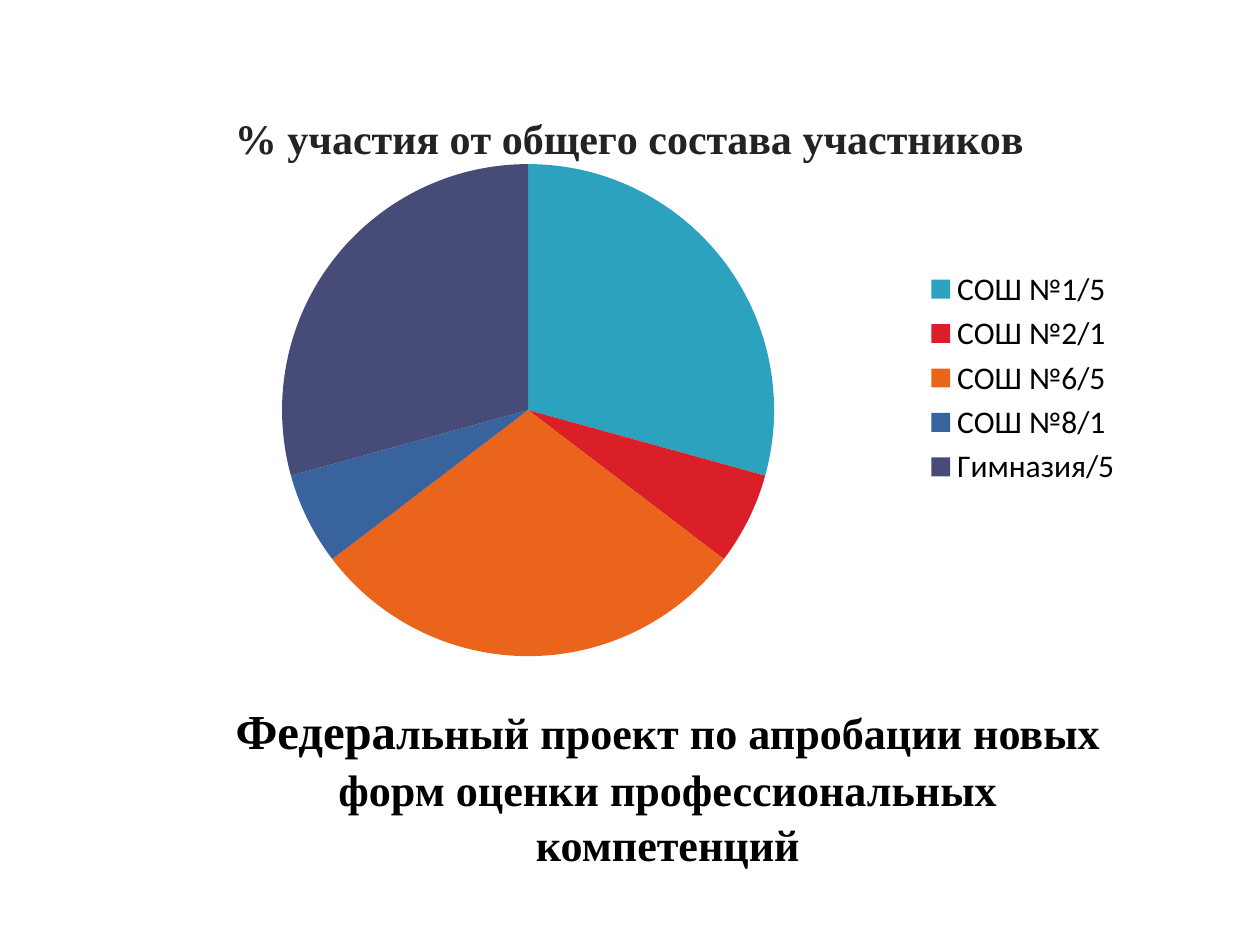
from lxml import etree
from pptx import Presentation
from pptx.chart.data import CategoryChartData
from pptx.dml.color import RGBColor
from pptx.enum.chart import XL_CHART_TYPE, XL_LEGEND_POSITION
from pptx.enum.text import MSO_ANCHOR, PP_ALIGN
from pptx.oxml import parse_xml
from pptx.oxml.ns import nsdecls
from pptx.util import Inches, Pt

PIE = XL_CHART_TYPE.PIE
RIGHT = XL_LEGEND_POSITION.RIGHT
MIDDLE = MSO_ANCHOR.MIDDLE
CENTER = PP_ALIGN.CENTER

BLACK = RGBColor(0x00, 0x00, 0x00)
GREY = RGBColor(0x23, 0x23, 0x23)
TEAL = RGBColor(0x2D, 0xA2, 0xBF)
RED = RGBColor(0xDA, 0x1F, 0x28)
ORANGE = RGBColor(0xEB, 0x64, 0x1B)
BLUE = RGBColor(0x39, 0x63, 0x9D)
INDIGO = RGBColor(0x47, 0x4B, 0x78)

SERIF = "Times New Roman"
SANS = "Calibri"
TITLE = "% участия от общего состава участников"
PARTS = [
    ("СОШ №1/5", 29, TEAL),
    ("СОШ №2/1", 6, RED),
    ("СОШ №6/5", 29, ORANGE),
    ("СОШ №8/1", 6, BLUE),
    ("Гимназия/5", 29, INDIGO),
]


def style(font, name, size, color, bold):
    font.name = name
    font.size = Pt(size)
    font.color.rgb = color
    font.bold = bold


prs = Presentation()
prs.slide_width = Inches(10)
prs.slide_height = Inches(7.5)
W, H = prs.slide_width, prs.slide_height
slide = prs.slides.add_slide(prs.slide_layouts[6])

# Caption below the chart
box = slide.shapes.add_textbox(
    int(W * 0.154), int(H * 0.73), int(W * 0.752), int(H * 0.2))
frame = box.text_frame
frame.word_wrap = True
frame.vertical_anchor = MIDDLE
para = frame.paragraphs[0]
para.alignment = CENTER
para.line_spacing = 1.05
for text, size in [
    ("Федера", 27.9),
    ("льный проект по апробации новых форм оценки "
     "профессиональных компетенций", 25.2),
]:
    run = para.add_run()
    run.text = text
    style(run.font, SERIF, size, BLACK, True)

# Pie chart
data = CategoryChartData()
data.categories = [name for name, share, color in PARTS]
data.add_series(TITLE, [share for name, share, color in PARTS])
chart = slide.shapes.add_chart(
    PIE, int(W * 0.098), int(H * 0.09), int(W * 0.803), int(H * 0.62),
    data).chart
style(chart.font, SANS, 18, BLACK, False)

# Slice colours
plot = chart.plots[0]
plot.vary_by_categories = True
for i, (name, share, color) in enumerate(PARTS):
    fill = plot.series[0].points[i].format.fill
    fill.solid()
    fill.fore_color.rgb = color

# Chart title and legend
chart.has_title = True
head = chart.chart_title.text_frame
head.text = TITLE
style(head.paragraphs[0].runs[0].font, SERIF, 24, GREY, True)
chart.has_legend = True
chart.legend.position = RIGHT
chart.legend.include_in_layout = False

# Plot area as shares of the chart frame
area = chart._chartSpace.chart.plotArea
for old in area.findall("{*}layout"):
    area.remove(old)
layout = parse_xml(f"<c:layout {nsdecls('c')}><c:manualLayout/></c:layout>")
for tag, val in [
    ("layoutTarget", "inner"), ("xMode", "edge"), ("yMode", "edge"),
    ("x", "0.02"), ("y", "0.135"), ("w", "0.76"), ("h", "0.84"),
]:
    ns = etree.QName(layout).namespace
    etree.SubElement(layout[0], f"{{{ns}}}{tag}").set("val", val)
area.insert(0, layout)

prs.save("out.pptx")
